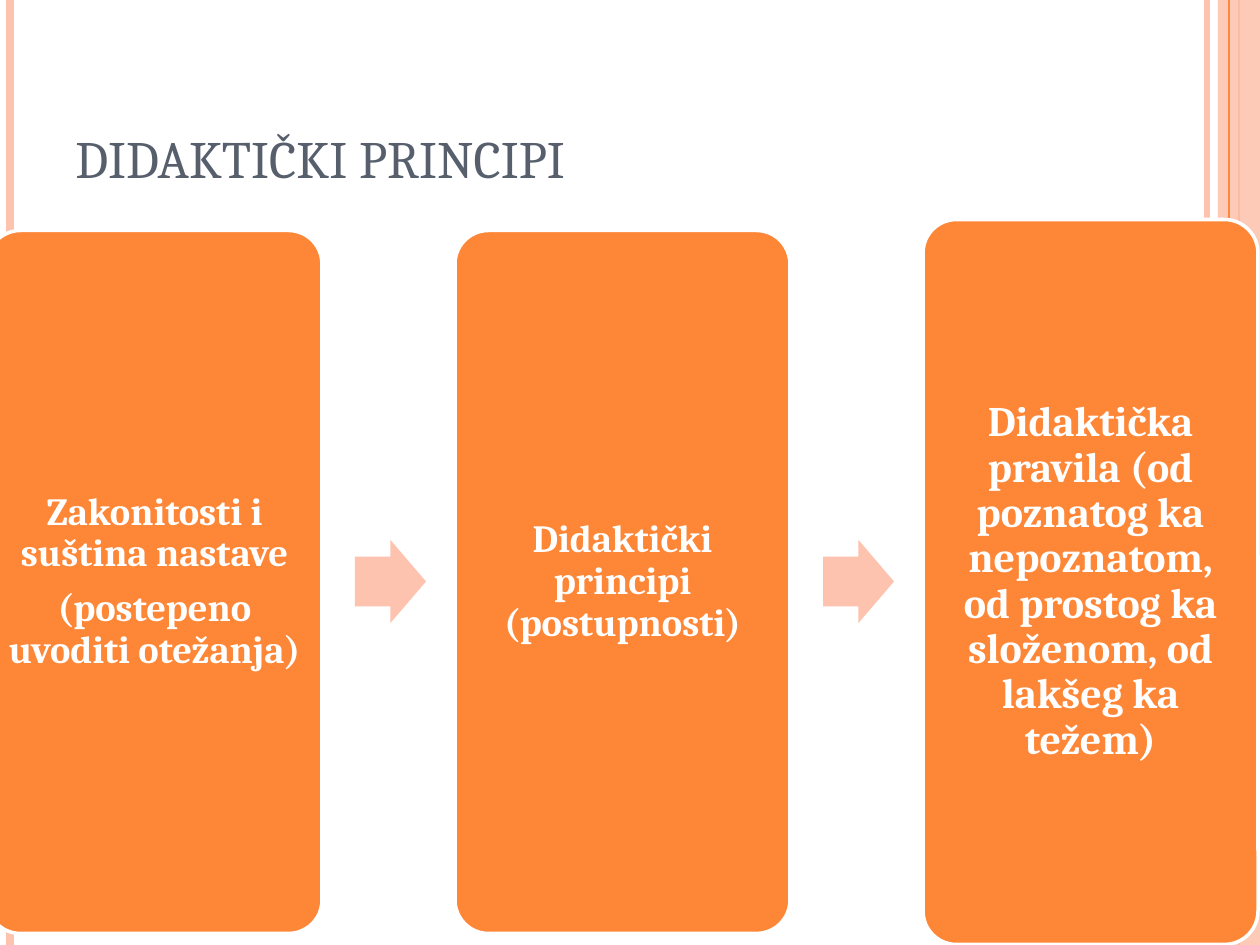
import pptx
import pptx.util
import pptx.dml.color
import pptx.enum.shapes
import pptx.enum.text
import pptx.oxml
import pptx.oxml.ns

PX = 914400 / 126
WIDTH, HEIGHT = 1260, 945
FONT = "Cambria"
ORANGE = pptx.dml.color.RGBColor(0xFE, 0x86, 0x37)
PEACH = pptx.dml.color.RGBColor(0xFE, 0xC3, 0xAE)
SLATE = pptx.dml.color.RGBColor(0x57, 0x5F, 0x6D)
WHITE = pptx.dml.color.RGBColor(0xFF, 0xFF, 0xFF)
SHAPES = pptx.enum.shapes.MSO_SHAPE
ANCHORS = pptx.enum.text.MSO_ANCHOR
qn = pptx.oxml.ns.qn


def emu(*lengths):
    return [round(length * PX) for length in lengths]


def add_filled(kind, left, top, width, height, color):
    shape = page.shapes.add_shape(kind, *emu(left, top, width, height))
    shape.shadow.inherit = False
    shape.fill.solid()
    shape.fill.fore_color.rgb = color
    shape.line.fill.background()
    return shape


deck = pptx.Presentation()
deck.slide_width, deck.slide_height = emu(WIDTH, HEIGHT)
page = deck.slides.add_slide(deck.slide_layouts[6])

# Vertical stripes at the page edges: x, colour, line width; the band lies below the last one
stripes = [(1207, PEACH, 3), (10, PEACH, 4.5), (1239, ORANGE, 1.5), (1229, ORANGE, 0.75)]
for x, color, weight in stripes:
    if x == 1229:
        band = add_filled(SHAPES.RECTANGLE, 1218, 0, 42, HEIGHT, PEACH)
        band_color = band.fill._xPr.find(".//" + qn("a:srgbClr"))
        band_color.append(pptx.oxml.parse_xml(
            f'<a:alpha {pptx.oxml.ns.nsdecls("a")} val="87000"/>'))
    stripe = page.shapes.add_connector(
        pptx.enum.shapes.MSO_CONNECTOR.STRAIGHT, *emu(x, 0, x, HEIGHT))
    stripe.line.color.rgb = color
    stripe.line.width = pptx.util.Pt(weight)
    stripe._element.spPr.append(pptx.oxml.parse_xml(
        f'<a:effectLst {pptx.oxml.ns.nsdecls("a")}/>'))

title = page.shapes.add_textbox(*emu(63, 38, 1029, 157))
title.text_frame.word_wrap = True
title.text_frame.vertical_anchor = ANCHORS.BOTTOM
title.text_frame.text = "DIDAKTIČKI PRINCIPI"
span = title.text_frame.paragraphs[0].runs[0]
span.font.name = FONT
span.font.size = pptx.util.Pt(30)
span.font.color.rgb = SLATE

# Three process steps, centred on one line: height, inset, text size, text
STEP_LEFT, STEP_PITCH, STEP_WIDTH, MIDDLE = -13, 468, 335, 582
steps = [
    (703, 11, 22, "Zakonitosti i suština nastave\n(postepeno uvoditi otežanja)"),
    (703, 11, 22, "Didaktički principi (postupnosti)"),
    (725, 13, 24, "Didaktička pravila (od poznatog ka nepoznatom, "
                  "od prostog ka složenom, od lakšeg ka težem)"),
]
for index, (height, inset, size, text) in enumerate(steps):
    left = STEP_LEFT + index * STEP_PITCH
    if index:
        arrow = add_filled(SHAPES.RIGHT_ARROW, left - 100, MIDDLE - 42, 71, 83, PEACH)
        arrow.adjustments[0] = 0.6
        arrow.adjustments[1] = 0.5
    card = add_filled(SHAPES.ROUNDED_RECTANGLE, left, MIDDLE - height / 2,
                      STEP_WIDTH, height, ORANGE)
    card.adjustments[0] = 0.1
    card.line.color.rgb = WHITE
    card.line.width = pptx.util.Pt(2)
    frame = card.text_frame
    frame.word_wrap = True
    frame.vertical_anchor = ANCHORS.MIDDLE
    (frame.margin_left, frame.margin_top,
     frame.margin_right, frame.margin_bottom) = emu(*[inset] * 4)
    frame.text = text
    for para in frame.paragraphs:
        para.alignment = pptx.enum.text.PP_ALIGN.CENTER
        para.line_spacing = 0.9
        para.space_after = pptx.util.Pt(round(size * 0.35, 1))
        font = para.runs[0].font
        font.name = FONT
        font.size = pptx.util.Pt(size)
        font.bold = True
        font.color.rgb = WHITE

deck.save("out.pptx")
